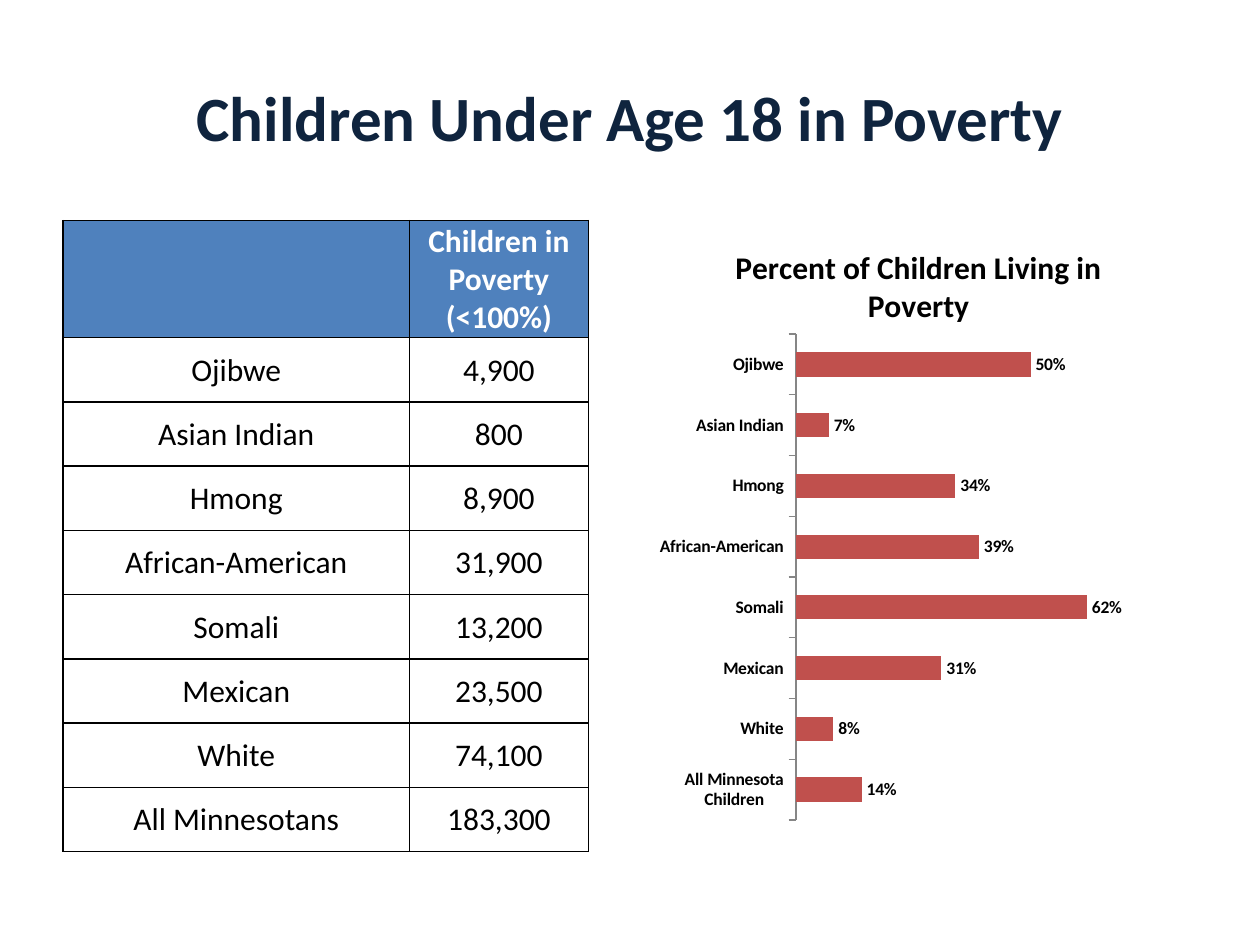
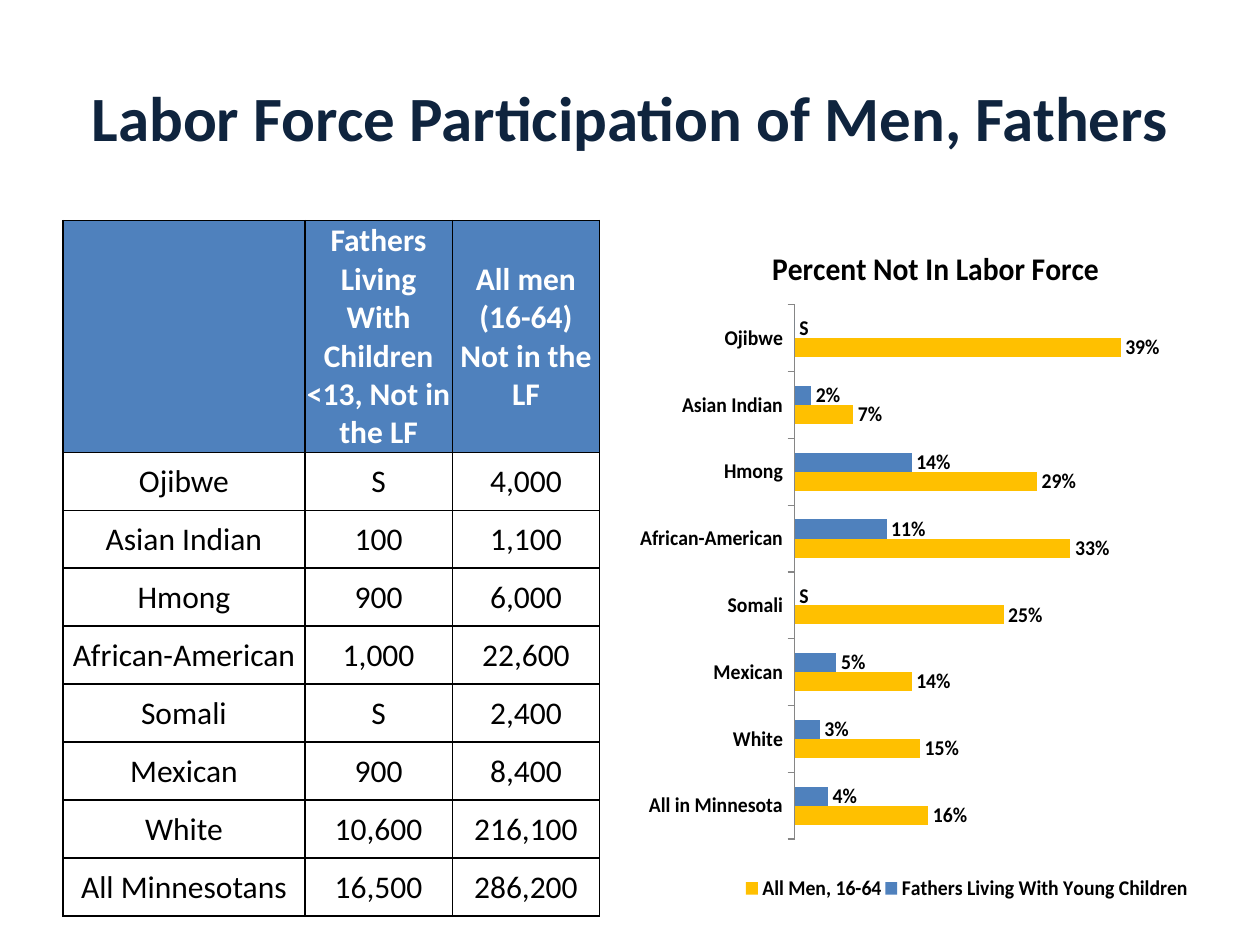
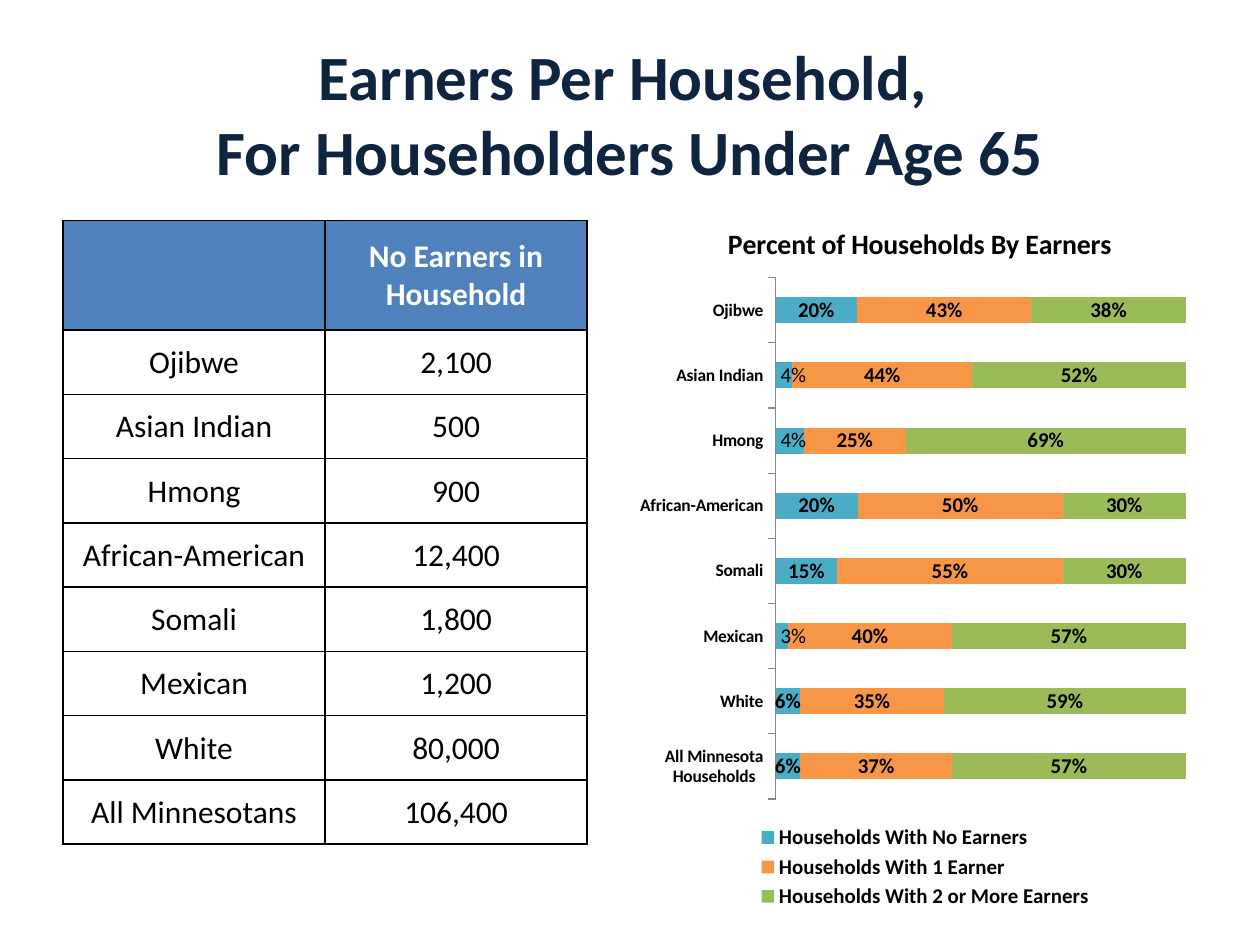
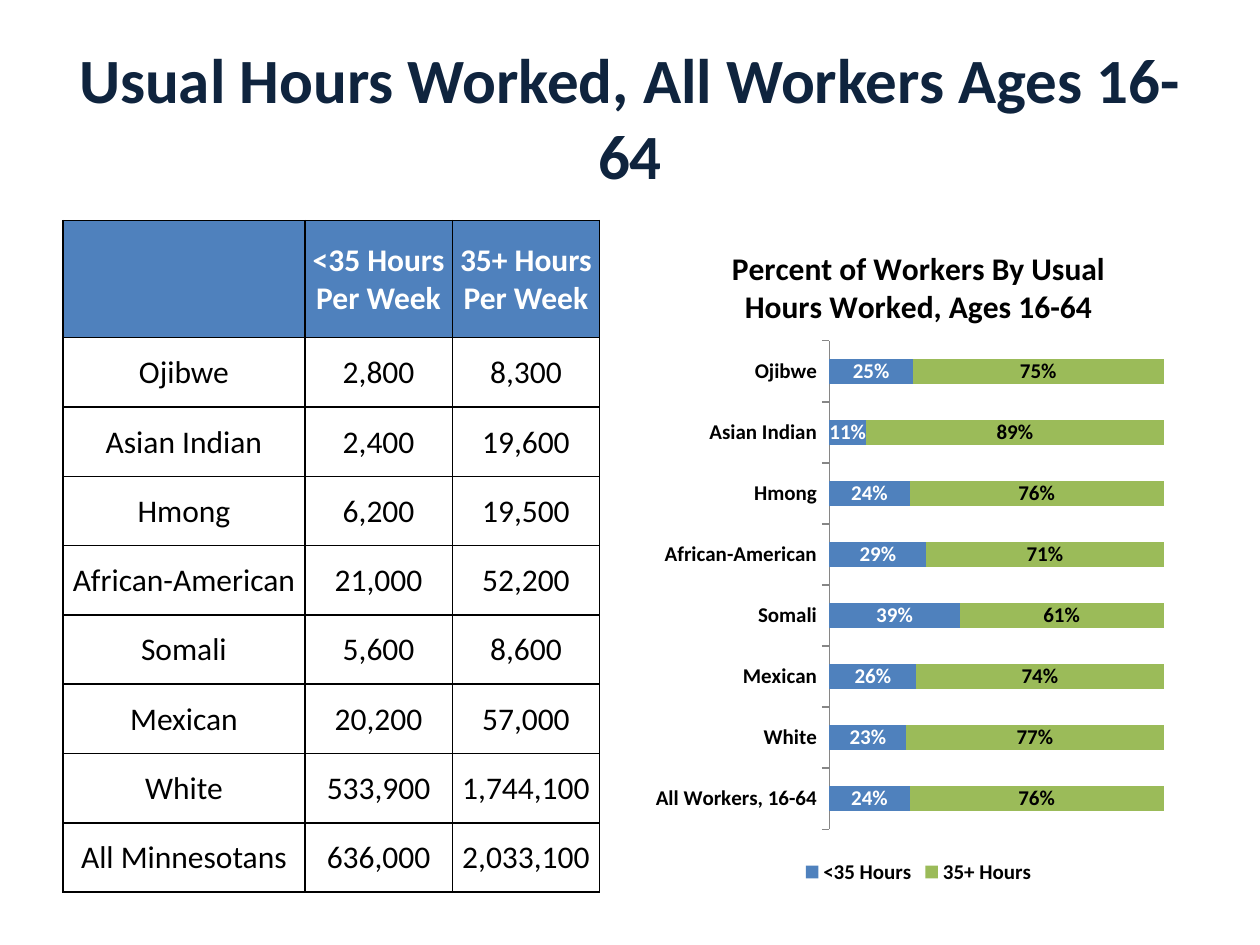
from dataclasses import dataclass, field

from lxml import etree
from pptx import Presentation
from pptx.chart.data import CategoryChartData
from pptx.dml.color import RGBColor
from pptx.enum.chart import XL_CHART_TYPE as ChartType
from pptx.enum.chart import XL_LABEL_POSITION as LabelPosition
from pptx.enum.chart import XL_LEGEND_POSITION as LegendPosition
from pptx.enum.chart import XL_TICK_LABEL_POSITION as TickLabels
from pptx.enum.chart import XL_TICK_MARK as TickMark
from pptx.enum.text import MSO_ANCHOR as Anchor
from pptx.enum.text import PP_ALIGN as Align
from pptx.oxml.ns import qn
from pptx.util import Inches, Pt

NAVY = RGBColor(0x0F, 0x24, 0x3E)
BLUE = RGBColor(0x4F, 0x81, 0xBD)
RED = RGBColor(0xC0, 0x50, 0x4D)
GOLD = RGBColor(0xFF, 0xC0, 0x00)
TEAL = RGBColor(0x4B, 0xAC, 0xC6)
ORANGE = RGBColor(0xF7, 0x96, 0x46)
GREEN = RGBColor(0x9B, 0xBB, 0x59)
GRAY = RGBColor(0x86, 0x86, 0x86)
BLACK = RGBColor(0, 0, 0)
WHITE = RGBColor(0xFF, 0xFF, 0xFF)
FONT = "Calibri"

GROUPS = ["Ojibwe", "Asian Indian", "Hmong", "African-American", "Somali", "Mexican", "White"]
TABLE_LEFT, TABLE_TOP = 0.5, 1.75
CHART_LEFT, CHART_WIDTH = 5.08, 4.42
TITLE_BOX = (0.5, 0.3, 9, 1.25)


@dataclass
class Measure:
    name: str
    percents: list
    color: RGBColor
    label_color: RGBColor = BLACK
    overrides: dict = field(default_factory=dict)
    override_bold: bool = False


@dataclass
class CountTable:
    widths: list
    header_height: float
    row_height: float
    columns: dict


@dataclass
class PercentChart:
    title: str
    total_name: str
    measures: list
    top: float
    height: float
    plot: tuple
    stacked: bool = False
    title_size: int = 18
    category_size: int = 10
    label_size: int = 12
    legend: bool = True
    legend_box: tuple = ()


def style_font(font, size, color=BLACK, bold=False):
    font.name = FONT
    font.size = Pt(size)
    font.bold = bold
    font.color.rgb = color


def add_title(slide, box, text):
    frame = slide.shapes.add_textbox(*map(Inches, box)).text_frame
    frame.word_wrap = True
    frame.vertical_anchor = Anchor.MIDDLE
    frame.text = text
    heading = frame.paragraphs[0]
    heading.alignment = Align.CENTER
    for run in heading.runs:
        style_font(run.font, 36, NAVY, True)


def add_borders(cell):
    properties = cell._tc.get_or_add_tcPr()
    for position, side in enumerate(("lnL", "lnR", "lnT", "lnB")):
        line = etree.Element(qn(f"a:{side}"), w=str(Pt(1)))
        fill = etree.SubElement(line, qn("a:solidFill"))
        etree.SubElement(fill, qn("a:srgbClr"), val=str(BLACK))
        properties.insert(position, line)


def fill_cell(cell, text, is_header):
    cell.margin_left = cell.margin_right = cell.margin_top = Inches(0.01)
    cell.margin_bottom = 0
    cell.vertical_anchor = Anchor.MIDDLE
    if is_header:
        cell.fill.solid()
        cell.fill.fore_color.rgb = BLUE
    else:
        cell.fill.background()
    add_borders(cell)
    cell.text_frame.text = text
    paragraph = cell.text_frame.paragraphs[0]
    paragraph.alignment = Align.CENTER
    for run in paragraph.runs:
        style_font(run.font, 18, WHITE if is_header else BLACK, is_header)


def add_count_table(slide, left, top, counts):
    names = GROUPS + ["All Minnesotans"]
    rows = [["", *counts.columns], *zip(names, *counts.columns.values())]
    heights = [counts.header_height] + [counts.row_height] * len(names)
    box = map(Inches, (left, top, sum(counts.widths), sum(heights)))
    table = slide.shapes.add_table(len(rows), len(counts.widths), *box).table
    table.first_row = table.horz_banding = False
    for column, width in zip(table.columns, counts.widths):
        column.width = Inches(width)
    for index, (row, texts, height) in enumerate(zip(table.rows, rows, heights)):
        row.height = Inches(height)
        for cell, text in zip(row.cells, texts):
            fill_cell(cell, text, index == 0)


def set_layout(parent, index, box, inner=False):
    layout = parent.find(qn("c:layout"))
    if layout is None:
        layout = etree.Element(qn("c:layout"))
        parent.insert(index, layout)
    manual = etree.SubElement(layout, qn("c:manualLayout"))
    settings = [("layoutTarget", "inner")] if inner else []
    settings += [("xMode", "edge"), ("yMode", "edge"), *zip("xywh", box)]
    for tag, value in settings:
        etree.SubElement(manual, qn(f"c:{tag}"), val=str(value))


def style_axes(chart, category_size):
    categories = chart.category_axis
    categories.reverse_order = True
    categories.has_major_gridlines = False
    categories.major_tick_mark = TickMark.OUTSIDE
    categories.minor_tick_mark = TickMark.NONE
    categories.tick_label_position = TickLabels.NEXT_TO_AXIS
    categories.format.line.color.rgb = GRAY
    style_font(categories.tick_labels.font, category_size, bold=True)
    values = chart.value_axis
    values.has_major_gridlines = False
    values.minimum_scale = 0
    values.visible = False


def style_measure(series, measure, size, stacked):
    series.format.fill.solid()
    series.format.fill.fore_color.rgb = measure.color
    series.invert_if_negative = False
    labels = series.data_labels
    labels.show_value = True
    labels.number_format = "0%"
    labels.number_format_is_linked = False
    labels.position = LabelPosition.CENTER if stacked else LabelPosition.OUTSIDE_END
    style_font(labels.font, size, measure.label_color, True)
    for index, text in measure.overrides.items():
        label = series.points[index].data_label
        label.text_frame.text = text
        run = label.text_frame.paragraphs[0].runs[0]
        style_font(run.font, size, measure.label_color, measure.override_bold)
        label.position = LabelPosition.INSIDE_BASE if stacked else LabelPosition.OUTSIDE_END


def add_percent_chart(slide, left, width, content):
    data = CategoryChartData(number_format="0%")
    data.categories = GROUPS + [content.total_name]
    for measure in content.measures:
        data.add_series(measure.name, [percent / 100 for percent in measure.percents])
    kind = ChartType.BAR_STACKED_100 if content.stacked else ChartType.BAR_CLUSTERED
    box = map(Inches, (left, content.top, width, content.height))
    chart = slide.shapes.add_chart(kind, *box, data).chart
    style_font(chart.font, 10)
    chart.has_title = True
    chart.chart_title.include_in_layout = False
    chart.chart_title.text_frame.text = content.title
    heading = chart.chart_title.text_frame.paragraphs[0].runs[0]
    style_font(heading.font, content.title_size, bold=True)

    style_axes(chart, content.category_size)
    plot = chart.plots[0]
    plot.gap_width = 150
    plot.overlap = 100 if content.stacked else 0
    plot.vary_by_categories = False
    for series, measure in zip(plot.series, content.measures):
        style_measure(series, measure, content.label_size, content.stacked)
    set_layout(chart._chartSpace.chart.plotArea, 0, content.plot, inner=True)

    chart.has_legend = content.legend
    if content.legend:
        chart.legend.position = LegendPosition.BOTTOM
        chart.legend.include_in_layout = False
        style_font(chart.legend.font, 12, bold=True)
        if content.legend_box:
            set_layout(chart.legend._element, 1, content.legend_box)


def add_topic_slide(deck, title, counts, percents, title_box=TITLE_BOX):
    slide = deck.slides.add_slide(deck.slide_layouts[6])
    add_title(slide, title_box, title)
    add_count_table(slide, TABLE_LEFT, TABLE_TOP, counts)
    add_percent_chart(slide, CHART_LEFT, CHART_WIDTH, percents)


def add_poverty(deck):
    counts = CountTable([2.75, 1.42], 0.93, 0.51, {
        "Children in Poverty (<100%)": [
            "4,900", "800", "8,900", "31,900", "13,200", "23,500", "74,100", "183,300"],
    })
    percents = PercentChart(
        "Percent of Children Living in Poverty", "All Minnesota Children",
        [Measure("Series 1", [50, 7, 34, 39, 62, 31, 8, 14], RED)],
        top=1.75, height=5.01, plot=(0.28, 0.18, 0.59, 0.77), label_size=10, legend=False)
    add_topic_slide(deck, "Children Under Age 18 in Poverty", counts, percents)


def add_labor_force(deck):
    counts = CountTable([1.92, 1.17, 1.17], 1.84, 0.46, {
        "Fathers Living With Children <13, Not in the LF": [
            "S", "100", "900", "1,000", "S", "900", "10,600", "16,500"],
        "All men (16-64) Not in the LF": [
            "4,000", "1,100", "6,000", "22,600", "2,400", "8,400", "216,100", "286,200"],
    })
    percents = PercentChart(
        "Percent Not In Labor Force", "All in Minnesota",
        [Measure("Fathers Living With Young Children", [0, 2, 14, 11, 0, 5, 3, 4], BLUE,
                 overrides={0: "S", 4: "S"}, override_bold=True),
         Measure("All Men, 16-64", [39, 7, 29, 33, 25, 14, 15, 16], GOLD)],
        top=1.75, height=5.58, plot=(0.23, 0.12, 0.72, 0.76), category_size=12,
        legend_box=(0.13, 0.92, 0.86, 0.06))
    add_topic_slide(deck, "Labor Force Participation of Men, Fathers", counts, percents)


def add_earners(deck):
    counts = CountTable([2.08, 2.08], 0.87, 0.51, {
        "No Earners in Household": [
            "2,100", "500", "900", "12,400", "1,800", "1,200", "80,000", "106,400"],
    })
    percents = PercentChart(
        "Percent of Households By Earners", "All Minnesota Households",
        [Measure("Households With No Earners", [20, 4, 7, 20, 15, 3, 6, 6], TEAL,
                 overrides={1: "4%", 2: "4%", 5: "3%"}),
         Measure("Households With 1 Earner", [43, 44, 25, 50, 55, 40, 35, 37], ORANGE),
         Measure("Households With 2 or More Earners", [38, 52, 69, 30, 30, 57, 59, 57], GREEN)],
        top=1.58, height=5.67, plot=(0.24, 0.11, 0.74, 0.73), stacked=True,
        title_size=16, legend_box=(0.2, 0.87, 0.62, 0.13))
    add_topic_slide(deck, "Earners Per Household, \vFor Householders Under Age 65",
                    counts, percents, title_box=(0.5, 0.17, 9, 1.45))


def add_hours(deck):
    counts = CountTable([1.92, 1.17, 1.17], 0.93, 0.55, {
        "<35 Hours Per Week": [
            "2,800", "2,400", "6,200", "21,000", "5,600", "20,200", "533,900", "636,000"],
        "35+ Hours Per Week": [
            "8,300", "19,600", "19,500", "52,200", "8,600", "57,000", "1,744,100", "2,033,100"],
    })
    percents = PercentChart(
        "Percent of Workers By Usual Hours Worked, Ages 16-64", "All Workers, 16-64",
        [Measure("<35 Hours", [25, 11, 24, 29, 39, 26, 23, 24], BLUE, WHITE),
         Measure("35+ Hours", [75, 89, 76, 71, 61, 74, 77, 76], GREEN)],
        top=1.75, height=5.31, plot=(0.34, 0.18, 0.6, 0.73), stacked=True, category_size=12)
    add_topic_slide(deck, "Usual Hours Worked, All Workers Ages 16-64", counts, percents)


def main():
    deck = Presentation()
    deck.slide_width, deck.slide_height = Inches(10), Inches(7.5)
    for add_topic in (add_poverty, add_labor_force, add_earners, add_hours):
        add_topic(deck)
    deck.save("out.pptx")


if __name__ == "__main__":
    main()
